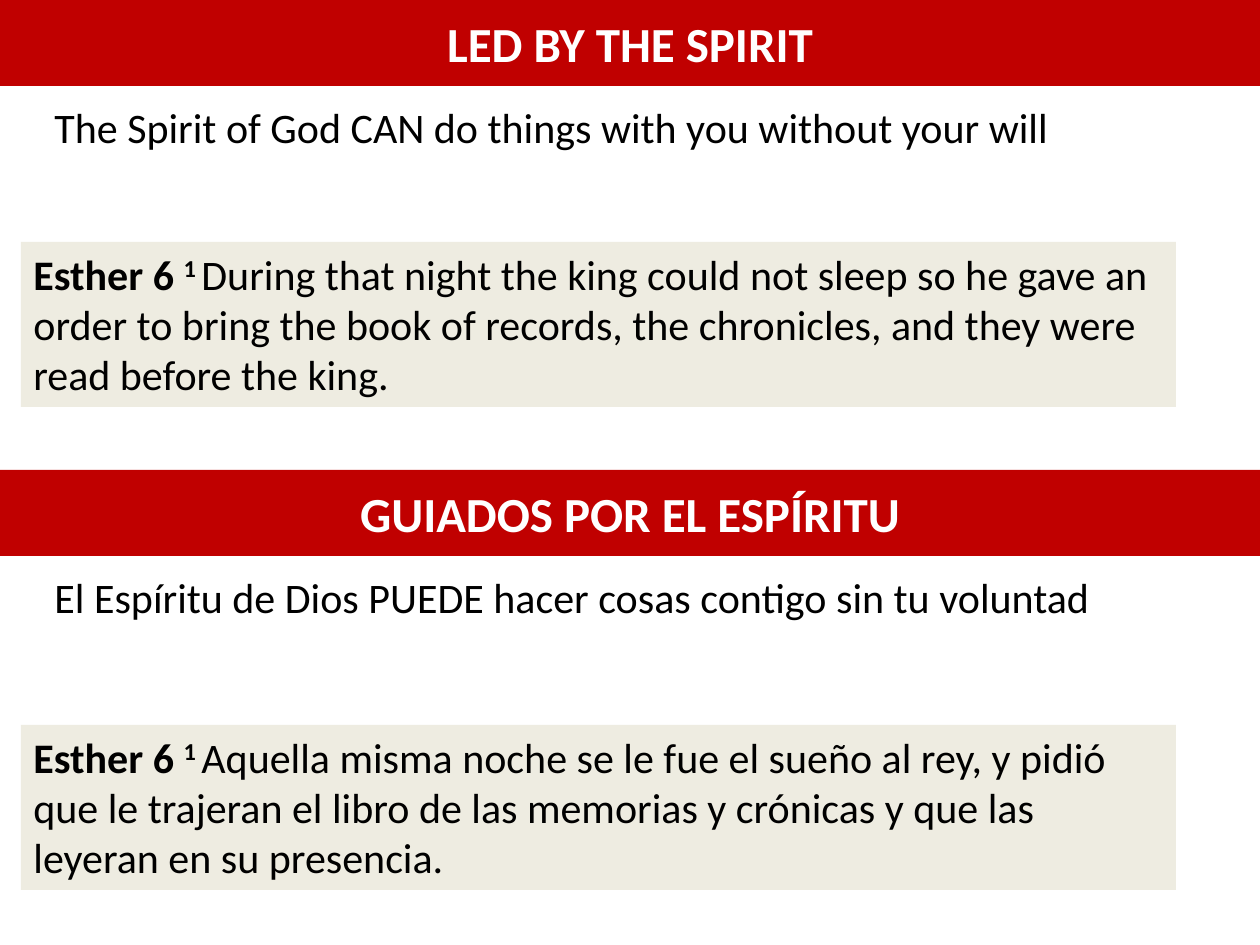
from dataclasses import dataclass

from pptx import Presentation
from pptx.dml.color import RGBColor
from pptx.enum.shapes import MSO_SHAPE
from pptx.enum.text import MSO_ANCHOR as Anchor, MSO_AUTO_SIZE as AutoSize, PP_ALIGN as Align
from pptx.shapes.autoshape import Shape
from pptx.slide import Slide
from pptx.util import Emu, Pt

PX_PER_INCH = 126
SLIDE_W, SLIDE_H = 1260, 945
BANNER_H = 86
STATEMENT_GAP = 95  # from banner top to statement top

RED = RGBColor(0xC0, 0x00, 0x00)
BEIGE = RGBColor(0xEE, 0xEC, 0xE1)
WHITE = RGBColor(0xFF, 0xFF, 0xFF)
BLACK = RGBColor(0x00, 0x00, 0x00)
FONT = "Calibri"


@dataclass(frozen=True)
class Section:
    """One language's heading, statement and Bible verse."""
    top: int
    heading: str
    statement: str
    verse_top: int
    verse: str


SECTIONS = [
    Section(0, "LED BY THE SPIRIT",
            "The Spirit of God CAN do things with you without your will",
            242,
            "During that night the king could not sleep so he gave an order to bring "
            "the book of records, the chronicles, and they were read before the king."),
    Section(470, "GUIADOS POR EL ESPÍRITU",
            "El Espíritu de Dios PUEDE hacer cosas contigo sin tu voluntad",
            725,
            "Aquella misma noche se le fue el sueño al rey, y pidió que le trajeran "
            "el libro de las memorias y crónicas y que las leyeran en su presencia."),
]


def px(length: int) -> Emu:
    return Emu(round(length * 914400 / PX_PER_INCH))


def add_rectangle(slide: Slide, left: int, top: int, width: int, height: int) -> Shape:
    rectangle = slide.shapes.add_shape(
        MSO_SHAPE.RECTANGLE, px(left), px(top), px(width), px(height))
    rectangle.shadow.inherit = False
    return rectangle


def paint(shape: Shape, color: RGBColor) -> None:
    shape.fill.solid()
    shape.fill.fore_color.rgb = color
    shape.line.fill.background()


def style(paragraph, size: int, color: RGBColor, align: Align) -> None:
    paragraph.alignment = align
    font = paragraph.font
    font.name, font.size, font.color.rgb = FONT, Pt(size), color


def format_banner(banner: Shape, heading: str) -> None:
    paint(banner, RED)
    frame = banner.text_frame
    frame.text = heading
    frame.word_wrap = True
    frame.auto_size = AutoSize.NONE
    frame.vertical_anchor = Anchor.MIDDLE
    style(frame.paragraphs[0], 28, WHITE, Align.CENTER)
    frame.paragraphs[0].font.bold = True


def add_statement(slide: Slide, top: int, statement: str) -> None:
    frame = slide.shapes.add_textbox(px(42), px(top), px(1116), px(63)).text_frame
    frame.word_wrap = True
    frame.auto_size = AutoSize.SHAPE_TO_FIT_TEXT
    frame.text = statement
    style(frame.paragraphs[0], 24, BLACK, Align.LEFT)


def add_verse(slide: Slide, top: int, verse: str) -> None:
    panel = add_rectangle(slide, 21, top, 1155, 165)
    paint(panel, BEIGE)
    frame = panel.text_frame
    frame.word_wrap = True
    frame.auto_size = AutoSize.SHAPE_TO_FIT_TEXT
    frame.vertical_anchor = Anchor.TOP
    paragraph = frame.paragraphs[0]
    style(paragraph, 24, BLACK, Align.LEFT)
    for text, bold in (("Esther 6 ", True), ("1 ", True), (verse, False)):
        run = paragraph.add_run()
        run.text = text
        run.font.bold = bold
    verse_number = paragraph.runs[1]
    verse_number._r.get_or_add_rPr().set("baseline", "30000")


def main() -> None:
    prs = Presentation()
    prs.slide_width, prs.slide_height = px(SLIDE_W), px(SLIDE_H)
    slide = prs.slides.add_slide(prs.slide_layouts[5])

    title = slide.shapes.title
    title.left, title.top = px(0), px(0)
    title.width, title.height = px(SLIDE_W), px(BANNER_H)
    english, spanish = SECTIONS
    format_banner(title, english.heading)
    format_banner(add_rectangle(slide, 0, spanish.top, SLIDE_W, BANNER_H), spanish.heading)

    for section in SECTIONS:
        add_statement(slide, section.top + STATEMENT_GAP, section.statement)
        add_verse(slide, section.verse_top, section.verse)

    prs.save("out.pptx")


if __name__ == "__main__":
    main()
